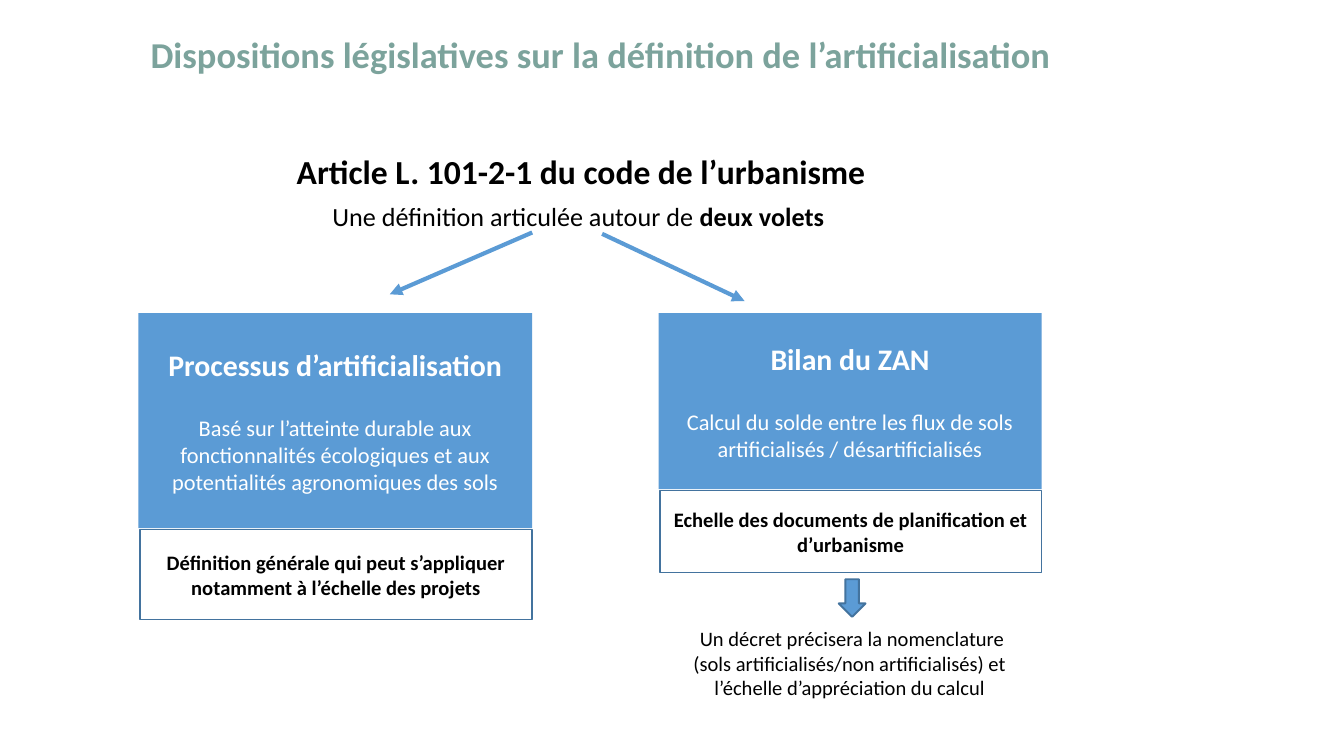
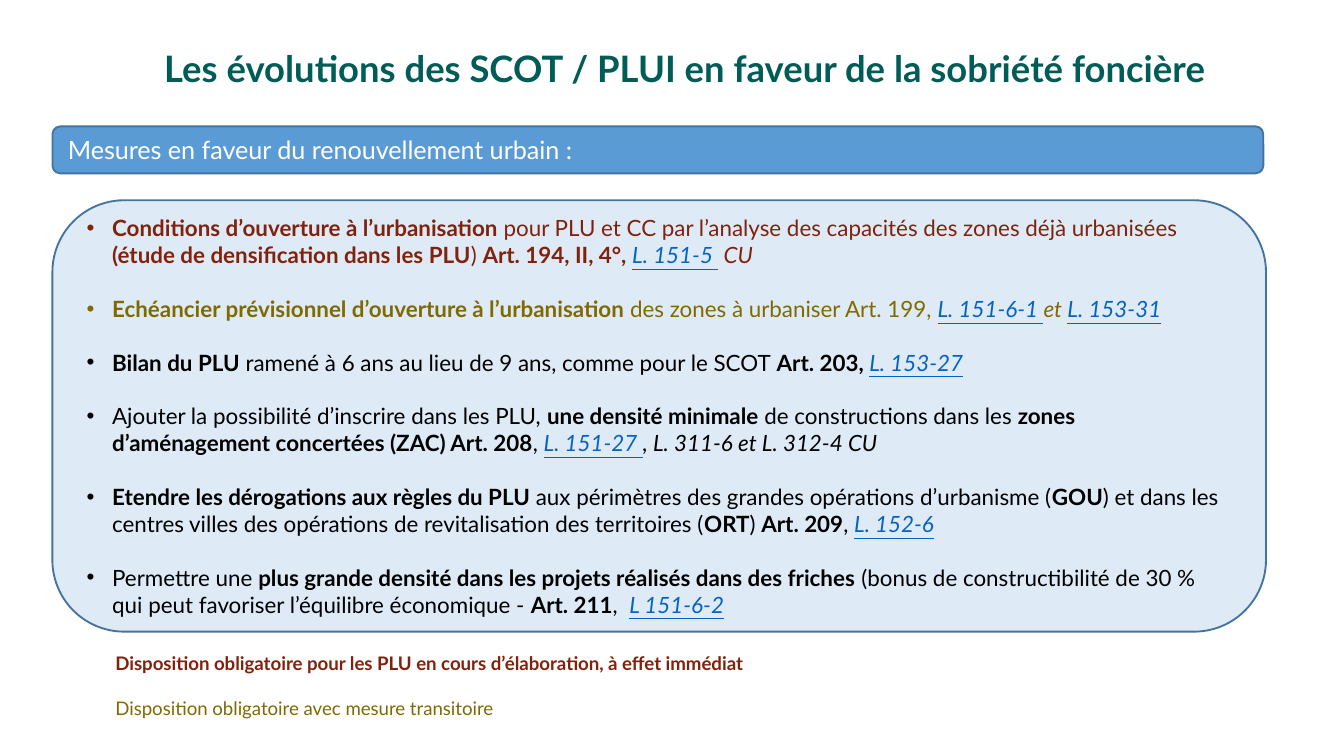
"""Build two slides on land take and on sober land use in town planning."""
from dataclasses import dataclass
from typing import NamedTuple, Optional

from lxml.etree import SubElement
from pptx import Presentation
from pptx.dml.color import RGBColor as Rgb
from pptx.enum.shapes import MSO_CONNECTOR as Link, MSO_SHAPE as Geo
from pptx.enum.text import MSO_ANCHOR as Anchor, PP_ALIGN as Align
from pptx.oxml.ns import qn
from pptx.util import Inches, Pt


@dataclass(frozen=True)
class Theme:
    sage: Rgb = Rgb(0x7C, 0xA3, 0x9C)
    teal: Rgb = Rgb(0x00, 0x5C, 0x57)
    blue: Rgb = Rgb(0x5B, 0x9B, 0xD5)
    edge: Rgb = Rgb(0x43, 0x73, 0x9E)
    pale: Rgb = Rgb(0xDE, 0xEB, 0xF7)
    link: Rgb = Rgb(0x05, 0x63, 0xC1)
    rust: Rgb = Rgb(0x81, 0x22, 0x0D)
    olive: Rgb = Rgb(0x80, 0x6A, 0x00)
    black: Rgb = Rgb(0, 0, 0)
    white: Rgb = Rgb(255, 255, 255)
    plain: str = "Calibri"
    round: str = "Lato"
    dot: str = "Arial"
    title: float = 19.5
    lead: float = 18
    head: float = 16
    sub: float = 14
    band: float = 13.5
    body: float = 12
    note: float = 11
    key: float = 10


T = Theme()


class Area(NamedTuple):
    left: float
    top: float
    width: float
    height: float


@dataclass(frozen=True)
class Span:
    text: str
    bold: bool = False
    slant: bool = False
    link: bool = False


@dataclass(frozen=True)
class Para:
    spans: tuple[Span, ...]
    size: float
    color: Rgb = T.black
    font: str = T.plain
    align: Align = Align.CENTER
    gap: float = 0
    bullet: bool = False


@dataclass(frozen=True)
class Card:
    area: Area
    head: str
    body: str
    note: str
    depth: float


def reg(text: str) -> Span:
    return Span(text)


def bold(text: str) -> Span:
    return Span(text, bold=True)


def ref(text: str) -> Span:
    return Span(text, slant=True, link=True)


def ital(text: str) -> Span:
    return Span(text, slant=True)


def write(frame, paras: list[Para], anchor: Anchor = Anchor.TOP, wrap: bool = True) -> None:
    frame.word_wrap = wrap
    frame.vertical_anchor = anchor
    for i, item in enumerate(paras):
        para = frame.add_paragraph() if i else frame.paragraphs[0]
        para.alignment = item.align
        if item.gap:
            para.space_before = Pt(item.gap)
        if item.bullet:
            props = para._p.get_or_add_pPr()
            props.set("marL", str(Inches(0.19)))
            props.set("indent", str(Inches(-0.19)))
            SubElement(props, qn("a:buFont")).set("typeface", T.dot)
            SubElement(props, qn("a:buChar")).set("char", "•")
        para.text = item.spans[0].text
        for span in item.spans[1:]:
            para.add_run().text = span.text
        for run, span in zip(para.runs, item.spans):
            font = run.font
            font.name, font.size = item.font, Pt(item.size)
            font.bold, font.italic, font.underline = span.bold, span.slant, span.link
            font.color.rgb = T.link if span.link else item.color


def place(area: Area) -> list[Inches]:
    return [Inches(side) for side in area]


def title(deck, area: Area, para: Para, wrap: bool):
    slide = deck.slides.add_slide(deck.slide_layouts[5])
    shape = slide.shapes.title
    shape.left, shape.top, shape.width, shape.height = place(area)
    write(shape.text_frame, [para], wrap=wrap)
    return slide


def label(slide, area: Area, paras: list[Para], wrap: bool = True) -> None:
    write(slide.shapes.add_textbox(*place(area)).text_frame, paras, wrap=wrap)


def box(slide, geo: Geo, area: Area, fill: Optional[Rgb], line: Optional[Rgb],
        paras: list[Para]):
    shape = slide.shapes.add_shape(geo, *place(area))
    shape.shadow.inherit = False
    if fill is None:
        shape.fill.background()
    else:
        shape.fill.solid()
        shape.fill.fore_color.rgb = fill
    if line is None:
        shape.line.fill.background()
    else:
        shape.line.color.rgb = line
        shape.line.width = Pt(1)
    write(shape.text_frame, paras, Anchor.MIDDLE)
    return shape


def arrow(slide, *ends: float) -> None:
    line = slide.shapes.add_connector(Link.STRAIGHT, *[Inches(end) for end in ends])
    line.line.color.rgb = T.blue
    line.line.width = Pt(2.25)
    SubElement(line.line._get_or_add_ln(), qn("a:tailEnd")).set("type", "triangle")
    SubElement(line._element.spPr, qn("a:effectLst"))


def draw_card(slide, card: Card) -> None:
    left, top, width, height = card.area
    box(slide, Geo.RECTANGLE, card.area, T.blue, None, [
        Para((bold(card.head),), T.head, T.white),
        Para((reg(card.body),), T.body, T.white, gap=17),
    ])
    under = Area(left + 0.01, top + height + 0.01, width - 0.01, card.depth)
    box(slide, Geo.RECTANGLE, under, None, T.edge, [Para((bold(card.note),), T.note)])


CARDS = [
    Card(Area(1.03, 2.33, 2.93, 1.6), "Processus d’artificialisation",
         "Basé sur l’atteinte durable aux fonctionnalités écologiques et aux "
         "potentialités agronomiques des sols",
         "Définition générale qui peut s’appliquer notamment à l’échelle des projets", 0.67),
    Card(Area(4.9, 2.33, 2.85, 1.31), "Bilan du ZAN",
         "Calcul du solde entre les flux de sols artificialisés / désartificialisés",
         "Echelle des documents de planification et d’urbanisme", 0.61),
]

DECREE = [
    "Un décret précisera la nomenclature",
    "(sols artificialisés/non artificialisés) et ",
    "l’échelle d’appréciation du calcul ",
]

RULES = [
    (T.rust, (
        bold("Conditions d’ouverture à l’urbanisation "),
        reg("pour PLU et CC par l’analyse des capacités des zones déjà urbanisées "),
        bold("(étude de densification dans les PLU"), reg(") "),
        bold("Art. 194, II, 4°, "), ref("L. 151-5 "), ital(" CU"))),
    (T.olive, (
        bold("Echéancier prévisionnel d’ouverture à l’urbanisation "),
        reg("des zones à urbaniser Art. 199, "),
        ref("L. 151-6-1 "), ital("et "), ref("L. 153-31"))),
    (T.black, (
        bold("Bilan du PLU"),
        reg(" ramené à 6 ans au lieu de 9 ans, comme pour le SCOT "),
        bold("Art. 203, "), ref("L. 153-27"))),
    (T.black, (
        reg("Ajouter la possibilité d’inscrire dans les PLU, "),
        bold("une densité minimale"), reg(" de constructions dans les "),
        bold("zones d’aménagement concertées (ZAC) Art. 208"), reg(", "),
        ref("L. 151-27 "), ital(", L. 311-6 et L. 312-4 CU"))),
    (T.black, (
        bold("Etendre les dérogations aux règles du PLU "),
        reg("aux périmètres des grandes opérations d’urbanisme ("), bold("GOU"),
        reg(") et dans les centres villes des opérations de revitalisation des territoires ("),
        bold("ORT"), reg(") "), bold("Art. 209"), reg(", "), ref("L. 152-6"))),
    (T.black, (
        reg("Permettre une "),
        bold("plus grande densité dans les projets réalisés dans des friches"),
        reg(" (bonus de constructibilité de 30 % qui peut favoriser l’équilibre économique - "),
        bold("Art. 211"), reg(",  "), ref("L 151-6-2"))),
]


def law(deck) -> None:
    head = "Dispositions législatives sur la définition de l’artificialisation"
    slide = title(deck, Area(1.02, 0.19, 6.94, 0.43),
                  Para((bold(head),), T.title, T.sage, align=Align.LEFT), False)
    arrow(slide, 3.96, 1.73, 2.9, 2.19)
    arrow(slide, 4.48, 1.74, 5.54, 2.24)
    for card in CARDS:
        draw_card(slide, card)
    down = box(slide, Geo.RIGHT_ARROW, Area(6.2, 4.35, 0.28, 0.2), T.blue, T.edge, [])
    down.rotation = 90
    label(slide, Area(4.4, 4.61, 3.88, 0.66),
          [Para((reg(line),), T.note) for line in DECREE])
    label(slide, Area(0, 1.07, 8.65, 1.01), [
        Para((bold("Article L. 101-2-1 du code de l’urbanisme"),), T.lead),
        Para((reg("Une définition articulée autour de "), bold("deux volets ")), T.sub, gap=5),
    ])


def plan(deck) -> None:
    head = "Les évolutions des SCOT / PLUI en faveur de la sobriété foncière"
    slide = title(deck, Area(0.49, 0.29, 9.22, 0.43),
                  Para((bold(head),), T.title, T.teal, T.round), True)
    box(slide, Geo.ROUNDED_RECTANGLE, Area(0.39, 1.49, 9.03, 3.21), T.pale, T.edge, [
        Para(spans, T.body, color, T.round, Align.LEFT, 14.4 if i else 0, True)
        for i, (color, spans) in enumerate(RULES)
    ])
    band = reg("Mesures en faveur du renouvellement urbain :")
    box(slide, Geo.ROUNDED_RECTANGLE, Area(0.39, 0.94, 9.01, 0.35), T.blue, T.edge,
        [Para((band,), T.band, T.white, T.round, Align.LEFT)])
    now = bold("Disposition obligatoire pour les PLU en cours d’élaboration, à effet immédiat")
    later = reg("Disposition obligatoire avec mesure transitoire")
    label(slide, Area(0.76, 4.8, 5.42, 0.61), [
        Para((now,), T.key, T.rust, T.round, Align.LEFT),
        Para((later,), T.key, T.olive, T.round, Align.LEFT, 12),
    ], wrap=False)


def main() -> None:
    deck = Presentation()
    deck.slide_width = Inches(10)
    deck.slide_height = Inches(10) * 9 // 16
    law(deck)
    plan(deck)
    deck.save("out.pptx")


if __name__ == "__main__":
    main()
